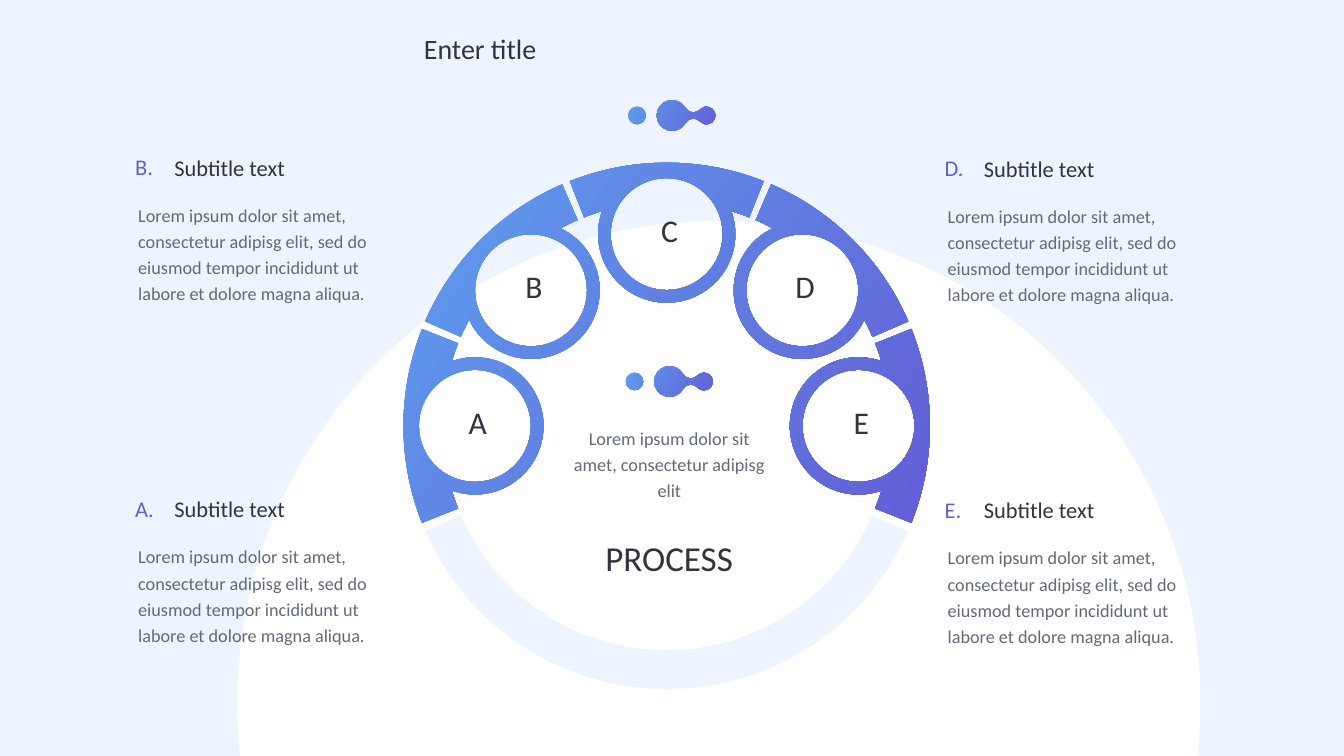
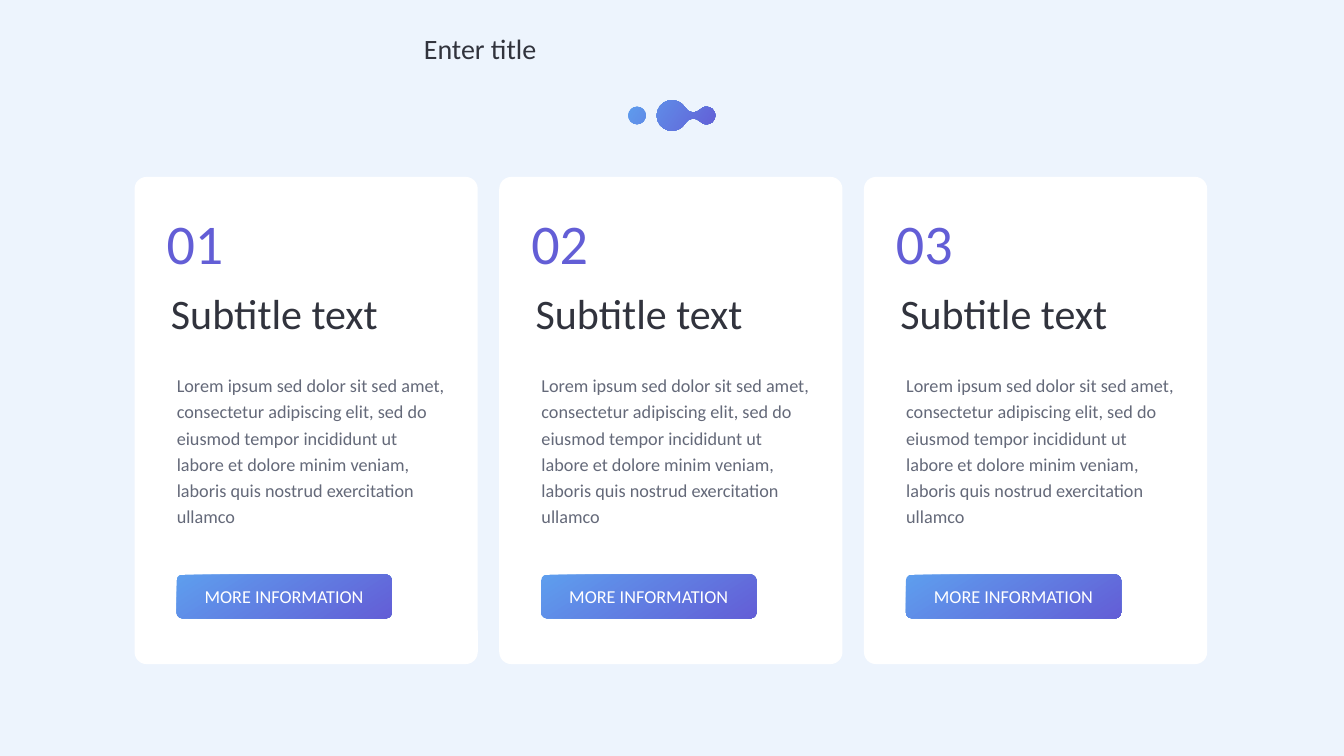
from math import acos, atan2, ceil, cos, degrees, dist, radians, sin, tan

from pptx import Presentation
from pptx import util as u
from pptx.dml.color import RGBColor
from pptx.enum import shapes, text
from pptx.oxml import ns, xmlchemy

SKY, WHITE, BAND = "EDF4FD", "FFFFFF", "EEF4FE"
INK, GREY, VIOLET, BLUE = "31333D", "646979", "635ED6", "5E9EEE"
CENTER = text.PP_ALIGN.CENTER
TOP, MIDDLE = text.MSO_ANCHOR.TOP, text.MSO_ANCHOR.MIDDLE

WHEEL = (952.4, 608.4)
OUTER, INNER = 376, 320.4
ORBIT, BUBBLE, HOLE = 274, 98, 80

SIDE_TEXT = ("Lorem ipsum dolor sit amet, consectetur adipisg elit, sed do eiusmod "
             "tempor incididunt ut labore et dolore magna aliqua.")
CARD_TEXT = ("Lorem ipsum sed dolor sit sed amet, consectetur adipiscing elit, sed do "
             "eiusmod tempor incididunt ut labore et dolore minim veniam, laboris quis "
             "nostrud exercitation ullamco")


def color(hex_string):
    return RGBColor.from_string(hex_string)


def polar(center, radius, angle):
    """Point at an angle in degrees, clockwise from the right."""
    x, y = center
    return x + radius * cos(radians(angle)), y + radius * sin(radians(angle))


def arc(center, radius, start, end):
    """Start point of an arc, then three Bezier points for each piece of it."""
    pieces = 2 * ceil(abs(end - start) / 180)
    step = (end - start) / pieces
    handle = 4 / 3 * tan(radians(step / 4))
    reach = radius * (1 + handle**2) ** 0.5
    lean = degrees(atan2(handle, 1))
    points = [polar(center, radius, start)]
    for i in range(pieces):
        angle = start + i * step
        points += [polar(center, reach, angle + lean),
                   polar(center, reach, angle + step - lean),
                   polar(center, radius, angle + step)]
    return points


def chain(*arcs):
    """Join arcs into one contour, bridging gaps with straight curves."""
    points = list(arcs[0])
    for following in arcs[1:]:
        if dist(points[-1], following[0]) > 1:
            points += [points[-1], following[0], following[0]]
        points += following[1:]
    return points


def wheel_segment(angle):
    """Outline of one rim piece merged with its bubble, and the bubble's hole."""
    half = 21.6
    join = degrees(acos((INNER**2 + ORBIT**2 - BUBBLE**2) / (2 * INNER * ORBIT)))
    x, y = polar((0, 0), INNER, join)
    turn = degrees(atan2(y, x - ORBIT))
    bubble = polar(WHEEL, ORBIT, angle)
    outline = chain(arc(WHEEL, OUTER, angle - half, angle + half),
                    arc(WHEEL, INNER, angle + half, angle + join),
                    arc(bubble, BUBBLE, angle + turn, angle + 360 - turn),
                    arc(WHEEL, INNER, angle - join, angle - half))
    return [outline, arc(bubble, HOLE, 360, 0)]


def droplet(x, y):
    """Outlines of a dot and of a large drop joined to a small one by a neck."""
    big, small, curve, rise = 22, 12.5, 13.3, 17.7
    to_neck = ((big + curve)**2 - rise**2) ** 0.5
    to_small = ((small + curve)**2 - rise**2) ** 0.5
    big_turn = degrees(atan2(rise, to_neck))
    small_turn = degrees(atan2(rise, to_small))
    neck = x + to_neck
    drop = chain(arc((x, y), big, big_turn, 360 - big_turn),
                 arc((neck, y - rise), curve, 180 - big_turn, small_turn),
                 arc((neck + to_small, y), small, 180 + small_turn, 540 - small_turn),
                 arc((neck, y + rise), curve, -small_turn, big_turn - 180))
    return [drop, arc((x - 50, y), small, 0, 360)]


def bend(shape):
    """Turn each three line points of a freeform into one Bezier curve."""
    for path in shape.element.iter(ns.qn("a:path")):
        lines = path.findall(ns.qn("a:lnTo"))
        for i in range(0, len(lines) - 2, 3):
            curve = xmlchemy.OxmlElement("a:cubicBezTo")
            lines[i].addprevious(curve)
            for line in lines[i:i + 3]:
                curve.append(line[0])
                path.remove(line)


class Deck:
    """Holds the shared style and the current slide; lengths are in points."""

    def __init__(self):
        self.deck = Presentation()
        self.deck.slide_width, self.deck.slide_height = u.Pt(1920), u.Pt(1080)
        self.page = None

    def add_page(self):
        self.page = self.deck.slides.add_slide(self.deck.slide_layouts[6])
        fill = self.page.background.fill
        fill.solid()
        fill.fore_color.rgb = color(SKY)

    def paint(self, shape, fill, angle):
        """Fill with one colour, or with the blue gradient if fill is None."""
        shape.shadow.inherit = False
        shape.line.fill.background()
        if fill:
            shape.fill.solid()
            shape.fill.fore_color.rgb = color(fill)
        else:
            shape.fill.gradient()
            shape.fill.gradient_angle = 360 - angle
            for stop, shade in zip(shape.fill.gradient_stops, (BLUE, VIOLET)):
                stop.color.rgb = color(shade)

    def shape(self, kind, left, top, width, height, fill=None, corner=None, angle=57):
        shape = self.page.shapes.add_shape(
            kind, *map(u.Pt, (left, top, width, height)))
        if corner is not None:
            shape.adjustments[0] = corner
        self.paint(shape, fill, angle)

    def outline(self, contours, fill=None):
        builder = None
        for points in contours:
            first, *rest = [(u.Pt(x), u.Pt(y)) for x, y in points]
            if builder is None:
                builder = self.page.shapes.build_freeform(*first)
            else:
                builder.move_to(*first)
            builder.add_line_segments(rest, close=True)
        shape = builder.convert_to_shape()
        bend(shape)
        self.paint(shape, fill, angle=34)

    def text(self, words, left, top, width, height, size, shade=INK,
             anchor=MIDDLE, **paragraph_format):
        box = self.page.shapes.add_textbox(*map(u.Pt, (left, top, width, height)))
        frame = box.text_frame
        inset = u.Pt(4.5)
        frame_format = dict(
            word_wrap=True, vertical_anchor=anchor,
            auto_size=text.MSO_AUTO_SIZE.SHAPE_TO_FIT_TEXT, margin_left=inset,
            margin_right=inset, margin_top=inset, margin_bottom=inset)
        para = frame.paragraphs[0]
        span = para.add_run()
        span.text = words
        span.font.color.rgb = color(shade)
        for target, values in ((frame, frame_format), (para, paragraph_format),
                               (span.font, dict(name="Calibri", size=u.Pt(size)))):
            for name, value in values.items():
                setattr(target, name, value)

    def body(self, words, left, top, width, height, **paragraph_format):
        self.text(words, left, top, width, height, 26, GREY, TOP,
                  line_spacing=1.2, **paragraph_format)

    def title(self, words):
        self.text(words, 601, 41, 718, 105, 40, anchor=TOP)
        self.outline(droplet(960, 165))

    def side_note(self, letter, left, top):
        self.text(f"{letter}.", left, top, 50, 46.5, 32, VIOLET)
        self.body(SIDE_TEXT, left + 4.3, top + 65.5, 394, 173.5)
        self.text("Subtitle text", left + 56, top + 0.5, 238, 46, 32)

    def card(self, number, left):
        rounded = shapes.MSO_SHAPE.ROUNDED_RECTANGLE
        self.shape(rounded, left, 252.7, 490.3, 696, WHITE, corner=0.035)
        self.text("Subtitle text", left + 47.5, 407.5, 390, 79, 60)
        self.body(CARD_TEXT, left + 55.8, 524.2, 392.4, 260)
        self.text(f"{number:02}", left + 41.3, 293.8, 170.6, 105, 80, VIOLET)
        self.shape(rounded, left + 60, 820.8, 307.4, 62.6, corner=0.132)
        self.text("MORE INFORMATION", left + 62.8, 832.3, 301.7, 38.2, 26, WHITE,
                  alignment=CENTER)


def process_page(deck):
    deck.add_page()
    deck.shape(shapes.MSO_SHAPE.OVAL, 339, 315.4, 1376, 1376, WHITE)
    deck.outline([chain(arc(WHEEL, OUTER, 23.6, 156.4),
                        arc(WHEEL, INNER, 156.4, 23.6))], BAND)
    steps = {letter: 180 + 45 * i for i, letter in enumerate("ABCDE")}
    deck.outline([contour for angle in steps.values()
                  for contour in wheel_segment(angle)])
    for letter, angle in steps.items():
        x, y = polar(WHEEL, ORBIT, angle)
        deck.text(letter, x - 30, y - 36, 68, 60, 45, alignment=CENTER)
    deck.text("PROCESS", 773, 762.5, 366, 67, 50, alignment=CENTER)
    deck.outline(droplet(956.5, 545))
    deck.body("Lorem ipsum dolor sit amet, consectetur adipisg elit",
              805, 599, 302.4, 130.3, alignment=CENTER)
    for letter, left, top in (("D", 1345, 216.7), ("E", 1345, 704.9),
                              ("B", 188.6, 215.3), ("A", 188.6, 703.4)):
        deck.side_note(letter, left, top)
    deck.title("Enter title")


def cards_page(deck):
    deck.add_page()
    for i in range(3):
        deck.card(i + 1, 192.2 + 521 * i)
    deck.title("Enter title")


def main():
    deck = Deck()
    process_page(deck)
    cards_page(deck)
    deck.deck.save("out.pptx")


if __name__ == "__main__":
    main()
